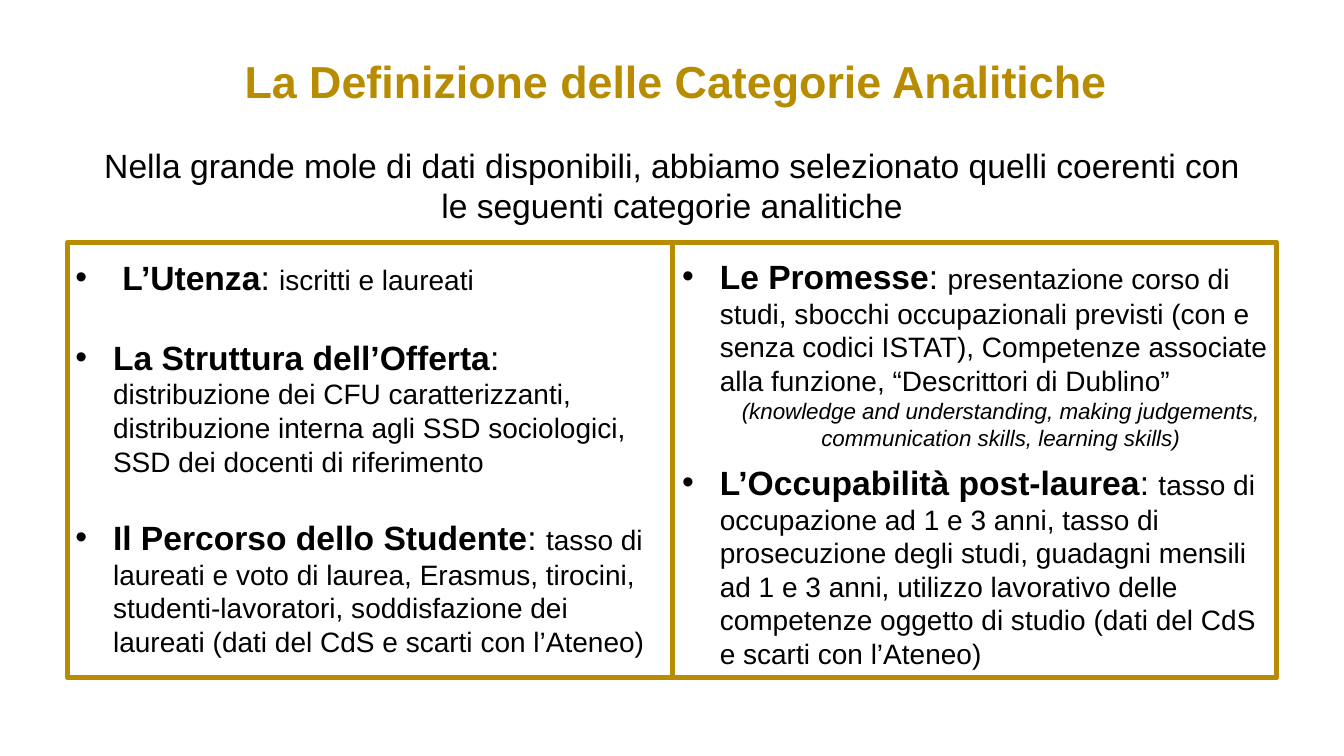
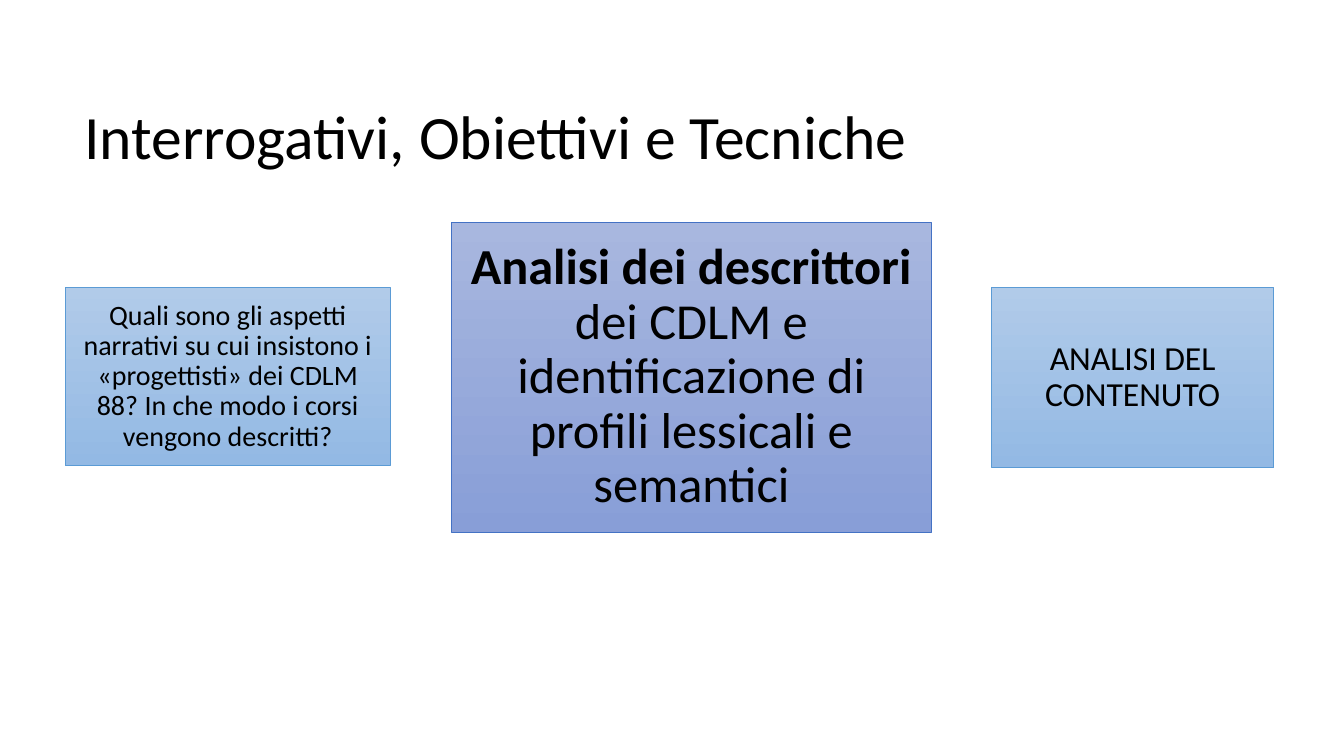
import pptx
import pptx.dml.color
import pptx.enum.shapes
import pptx.enum.text
import pptx.oxml.ns
import pptx.util
from lxml import etree

Cm, Pt = pptx.util.Cm, pptx.util.Pt
ALIGN = pptx.enum.text.PP_ALIGN
MIDDLE = pptx.enum.text.MSO_ANCHOR.MIDDLE

# Shared look
SANS, BODY = "Arial", "Calibri"
BLACK, GOLD = "000000", "B88C00"
LIGHT_BLUE = ("B1CBE9", "93B9E4", "5B9BD5")  # top, bottom, outline
INDIGO = ("A8B7DF", "889ED7", "4472C4")
HANGING = Cm(0.95)
HEAD_SIZE, DETAIL_SIZE, NOTE_SIZE = 24, 20, 16


def color(value):
    return pptx.dml.color.RGBColor.from_string(value)


def add_span(para, text, size, font=SANS, tint=BLACK, bold=False, italic=False):
    span = para.add_run()
    span.text = text
    span.font.name = font
    span.font.size = Pt(size)
    span.font.bold = bold
    span.font.italic = italic
    span.font.color.rgb = color(tint)


def add_box(page, left, top, width, height, wrap=True):
    box = page.shapes.add_textbox(Cm(left), Cm(top), Cm(width), Cm(height))
    box.text_frame.word_wrap = wrap
    return box


def add_line_of_text(page, area, text, size, align, wrap=True, **style):
    box = add_box(page, *area, wrap=wrap)
    para = box.text_frame.paragraphs[0]
    para.alignment = align
    add_span(para, text, size, **style)
    return box


def add_rectangle(page, left, top, width, height, outline, weight):
    box = page.shapes.add_shape(pptx.enum.shapes.MSO_SHAPE.RECTANGLE,
                                Cm(left), Cm(top), Cm(width), Cm(height))
    box.shadow.inherit = False
    box.fill.background()
    box.line.color.rgb = color(outline)
    box.line.width = Pt(weight)
    return box


def set_indent(para, left, first=0):
    properties = para._p.get_or_add_pPr()
    properties.set("marL", str(int(left)))
    properties.set("indent", str(int(first)))
    return properties


def add_bullet(para):
    properties = set_indent(para, HANGING, -HANGING)
    for tag, name, value in (("a:buFont", "typeface", SANS), ("a:buChar", "char", "•")):
        etree.SubElement(properties, pptx.oxml.ns.qn(tag)).set(name, value)


def add_categories(page, area, entries, gap):
    """Each entry is a bold heading, its details and an optional centred note."""
    frame = add_box(page, *area).text_frame
    for index, (heading, details, note) in enumerate(entries):
        para = frame.add_paragraph() if index else frame.paragraphs[0]
        add_bullet(para)
        if index:
            para.space_before = Pt(gap)
        add_span(para, heading, HEAD_SIZE, bold=True)
        add_span(para, ": ", HEAD_SIZE)
        add_span(para, details, DETAIL_SIZE)
        if note:
            para = frame.add_paragraph()
            para.alignment = ALIGN.CENTER
            set_indent(para, Cm(1.27))
            add_span(para, note, NOTE_SIZE, italic=True)


def add_panel(page, area, palette, size, text, lead=""):
    start, end, outline = palette
    box = add_rectangle(page, *area, outline, 0.5)
    box.fill.gradient()
    box.fill.gradient_angle = 270
    for stop, tint in zip(box.fill.gradient_stops, (start, end)):
        stop.color.rgb = color(tint)
    frame = box.text_frame
    frame.word_wrap = True
    frame.vertical_anchor = MIDDLE
    para = frame.paragraphs[0]
    para.alignment = ALIGN.CENTER
    para.line_spacing = 0.9
    if lead:
        add_span(para, lead, size, font=BODY, bold=True)
    add_span(para, text, size, font=BODY)


def build_categories(page):
    # Title and introduction
    add_line_of_text(page, (5.84, 1.24, 22.4, 1.63),
                     "La Definizione delle Categorie Analitiche", 32, ALIGN.CENTER,
                     wrap=False, tint=GOLD, bold=True)
    add_line_of_text(page, (2, 3.53, 29.87, 2.31),
                     "Nella grande mole di dati disponibili, abbiamo selezionato quelli "
                     "coerenti con le seguenti categorie analitiche", 24, ALIGN.CENTER)

    # Two framed columns
    frame_left, frame_width = 1.7, 15.24
    for column in range(2):
        add_rectangle(page, frame_left + column * frame_width, 6.12,
                      frame_width, 10.95, GOLD, 3.5)
    add_categories(page, (1.65, 6.35, 15.29, 10.52), [
        (" L’Utenza", "iscritti e laureati", ""),
        ("La Struttura dell’Offerta",
         "distribuzione dei CFU caratterizzanti, distribuzione interna agli SSD "
         "sociologici, SSD dei docenti di riferimento", ""),
        ("Il Percorso dello Studente",
         "tasso di laureati e voto di laurea, Erasmus, tirocini, studenti-lavoratori, "
         "soddisfazione dei laureati (dati del CdS e scarti con l’Ateneo)", ""),
    ], gap=28)
    add_categories(page, (16.94, 6.32, 15.29, 10.7), [
        ("Le Promesse",
         "presentazione corso di studi, sbocchi occupazionali previsti (con e senza "
         "codici ISTAT), Competenze associate alla funzione, “Descrittori di Dublino”",
         "(knowledge and understanding, making judgements, communication skills, "
         "learning skills)"),
        ("L’Occupabilità post-laurea",
         "tasso di occupazione ad 1 e 3 anni, tasso di prosecuzione degli studi, "
         "guadagni mensili ad 1 e 3 anni, utilizzo lavorativo delle competenze oggetto "
         "di studio (dati del CdS e scarti con l’Ateneo)", ""),
    ], gap=8)


def build_techniques(page):
    # Title
    title = add_line_of_text(page, (1.88, 1.68, 21.41, 3.68),
                             "Interrogativi, Obiettivi e Tecniche", 44, ALIGN.LEFT,
                             font=BODY)
    title.text_frame.vertical_anchor = MIDDLE
    title.text_frame.paragraphs[0].line_spacing = 0.9

    # Question, objective and technique
    add_panel(page, (1.65, 7.24, 8.18, 4.5), LIGHT_BLUE, 20,
              "Quali sono gli aspetti narrativi su cui insistono i «progettisti» dei "
              "CDLM 88? In che modo i corsi vengono descritti?")
    add_panel(page, (11.38, 5.61, 12.09, 7.8), INDIGO, 36,
              "dei CDLM e identificazione di profili lessicali e semantici",
              lead="Analisi dei descrittori ")
    add_panel(page, (24.99, 7.24, 7.11, 4.55), LIGHT_BLUE, 24, "ANALISI DEL CONTENUTO")


def main():
    deck = pptx.Presentation()
    deck.slide_width, deck.slide_height = Cm(33.87), Cm(19.05)
    blank = deck.slide_layouts[6]
    for build in (build_categories, build_techniques):
        build(deck.slides.add_slide(blank))
    deck.save("out.pptx")


if __name__ == "__main__":
    main()
